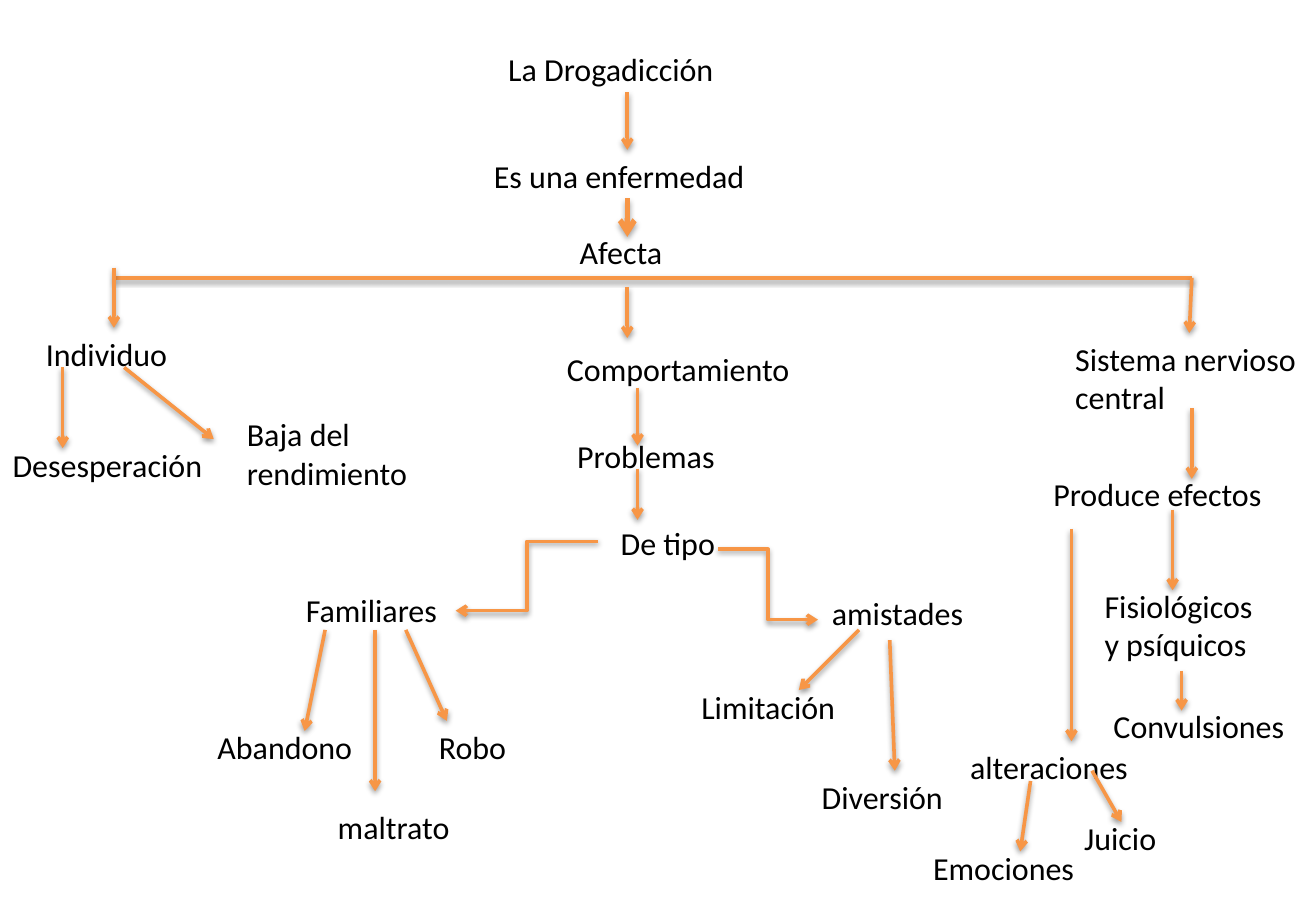
from lxml.etree import SubElement
from pptx import Presentation
from pptx.dml.color import RGBColor
from pptx.enum.shapes import MSO_CONNECTOR
from pptx.enum.text import MSO_ANCHOR, MSO_AUTO_SIZE, PP_ALIGN
from pptx.oxml.ns import qn
from pptx.util import Inches, Pt


def color(code):
    return RGBColor.from_string(code)


class Map:
    font = "Calibri"
    size = 18
    ink = "000000"
    accent = "F79646"

    def __init__(self, deck):
        self.slide = deck.slides.add_slide(deck.slide_layouts[5])

    def fill(self, shape, text):
        frame = shape.text_frame
        frame.text = text
        frame.word_wrap = True
        frame.auto_size = MSO_AUTO_SIZE.NONE
        frame.vertical_anchor = MSO_ANCHOR.TOP
        para = frame.paragraphs[0]
        para.alignment = PP_ALIGN.LEFT
        for run in para.runs:
            run.font.name = self.font
            run.font.size = Pt(self.size)
            run.font.color.rgb = color(self.ink)

    def title(self, text, left, top, width, height=0.4):
        shape = self.slide.shapes.title
        shape.left, shape.top = Inches(left), Inches(top)
        shape.width, shape.height = Inches(width), Inches(height)
        self.fill(shape, text)

    def label(self, text, left, top, width, height=0.4):
        box = self.slide.shapes.add_textbox(
            Inches(left), Inches(top), Inches(width), Inches(height))
        self.fill(box, text)

    def line(self, start, end, kind=MSO_CONNECTOR.STRAIGHT, width=2,
             head=True, dist=20000, alpha=38000):
        link = self.slide.shapes.add_connector(
            kind, *(Inches(n) for n in (*start, *end)))
        link.line.color.rgb = color(self.accent)
        link.line.width = Pt(width)
        props = link.element.spPr
        if head:
            SubElement(props.find(qn("a:ln")), qn("a:tailEnd"), type="arrow")
        effects = SubElement(props, qn("a:effectLst"))
        shadow = SubElement(effects, qn("a:outerShdw"), blurRad="40000",
                            dist=str(dist), dir="5400000", rotWithShape="0")
        tint = SubElement(shadow, qn("a:srgbClr"), val="000000")
        SubElement(tint, qn("a:alpha"), val=str(alpha))


LABELS = [
    ("Es una enfermedad", 3.76, 1.17, 2.83),
    ("Afecta", 4.43, 1.77, 1.5),
    ("Individuo", 0.26, 2.56, 1.65),
    ("Comportamiento", 4.33, 2.68, 2.02),
    ("Sistema nervioso central", 8.3, 2.6, 1.98, 0.71),
    ("Desesperación", 0, 3.43, 2.3),
    ("Baja del rendimiento", 1.83, 3.19, 2.05, 0.71),
    ("Problemas", 4.41, 3.36, 2.02),
    ("De tipo", 4.75, 4.04, 1.2),
    ("Familiares", 2.29, 4.56, 1.28),
    ("Abandono", 1.6, 5.63, 1.34),
    ("maltrato", 2.54, 6.26, 1.1),
    ("Robo", 3.33, 5.63, 1.26),
    ("amistades", 6.4, 4.59, 1.34),
    ("Limitación", 5.38, 5.32, 1.26),
    ("Diversión", 6.32, 6.02, 1.34),
    ("Produce efectos", 8.13, 3.66, 1.97),
    ("Fisiológicos y psíquicos", 8.53, 4.53, 1.42, 0.71),
    ("Convulsiones", 8.6, 5.47, 1.67),
    ("alteraciones", 7.48, 5.79, 1.44),
    ("Emociones", 7.19, 6.58, 1.42),
    ("Juicio", 8.37, 6.34, 0.79),
]

ARROWS = [
    ((4.9, 0.72), (4.9, 1.17)),
    ((0.89, 2.09), (0.89, 2.56)),
    ((4.9, 2.24), (4.9, 2.64)),
    ((9.31, 2.17), (9.29, 2.6)),
    ((0.49, 2.87), (0.49, 3.5)),
    ((0.97, 2.87), (1.67, 3.43)),
    ((4.98, 3.03), (4.98, 3.48)),
    ((4.98, 3.66), (4.98, 4.06)),
    ((2.54, 4.92), (2.38, 5.71)),
    ((2.93, 4.92), (2.93, 6.18)),
    ((3.17, 4.92), (3.49, 5.63)),
    ((6.71, 4.92), (6.24, 5.39)),
    ((6.95, 5), (6.99, 6.02)),
    ((9.31, 3.19), (9.31, 3.74)),
    ((9.16, 3.98), (9.16, 4.61)),
    ((8.37, 4.13), (8.37, 5.79)),
    ((9.23, 5.24), (9.23, 5.55)),
    ((8.05, 6.1), (7.97, 6.65)),
    ((8.53, 6.02), (8.76, 6.42)),
]

BENDS = [
    ((4.67, 4.23), (3.56, 4.77)),
    ((5.61, 4.29), (6.39, 4.84)),
]


def main():
    deck = Presentation()
    deck.slide_width, deck.slide_height = Inches(10.28), Inches(7.17)
    chart = Map(deck)
    chart.title("La Drogadicción", 3.87, 0.34, 2.81)
    for label in LABELS:
        chart.label(*label)
    chart.line((4.9, 1.55), (4.9, 1.85), width=3, dist=23000, alpha=35000)
    chart.line((0.89, 2.17), (9.31, 2.17), head=False)
    for start, end in ARROWS:
        chart.line(start, end)
    for start, end in BENDS:
        chart.line(start, end, MSO_CONNECTOR.ELBOW)
    deck.save("out.pptx")


if __name__ == "__main__":
    main()
